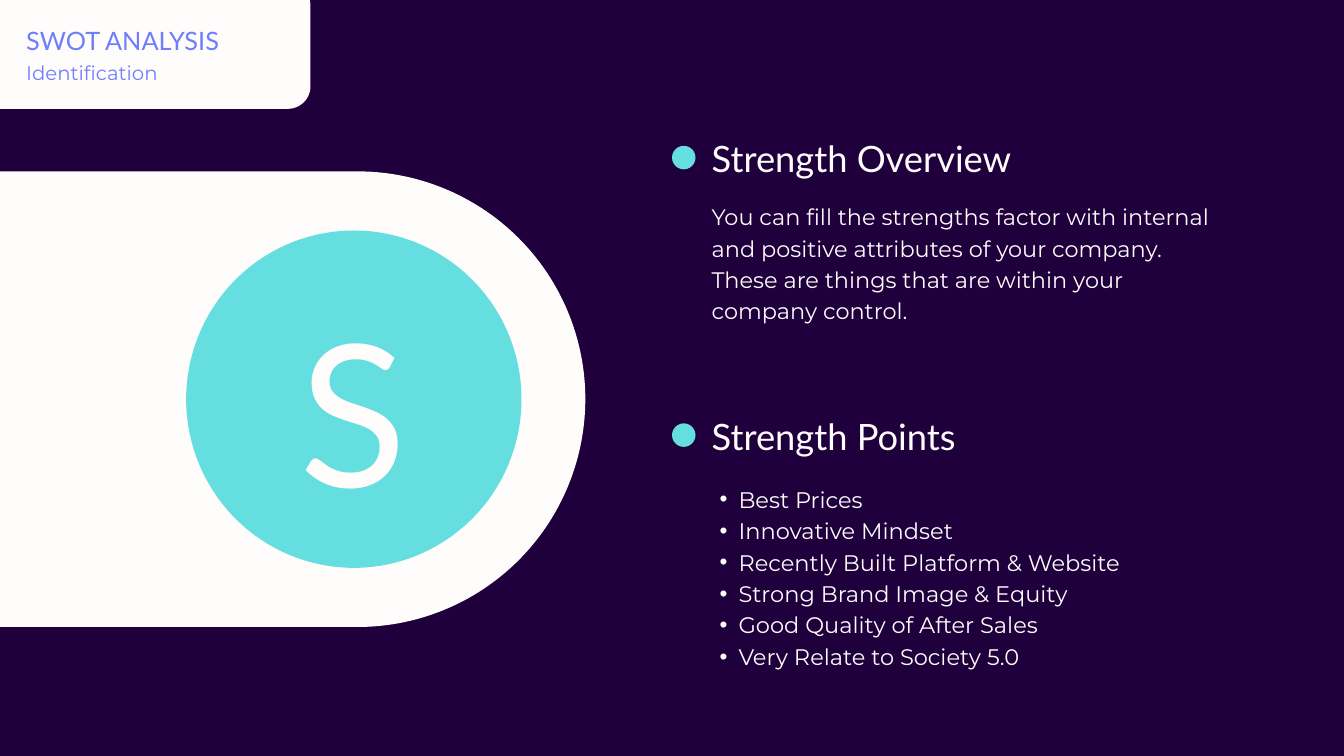
from dataclasses import dataclass

import pptx
import pptx.dml.color
import pptx.enum.shapes
import pptx.enum.text
import pptx.oxml.ns
import pptx.util
from lxml import etree
from pptx.util import Inches

SHAPES = pptx.enum.shapes.MSO_SHAPE
ALIGN = pptx.enum.text.PP_ALIGN

NIGHT = "1F003D"
WHITE = "FFFCFC"
AQUA = "64DEDF"
VIOLET = "6E7EFC"


@dataclass
class Area:
    left: float
    top: float
    width: float
    height: float

    def lengths(self) -> list:
        return [Inches(n) for n in (self.left, self.top, self.width, self.height)]


@dataclass
class Style:
    font: str
    size: float
    leading: float
    color: str = WHITE
    align: ALIGN = ALIGN.LEFT
    bullet: bool = False


@dataclass
class Section:
    heading: str
    top: float
    body: Area
    style: Style
    lines: list[str]


TITLE = Style("Lato", 27.1, 37.9, VIOLET)
SUBTITLE = Style("Montserrat", 21.1, 29.5, VIOLET)
LETTER = Style("Lato", 212.5, 297.5, align=ALIGN.CENTER)
HEADING = Style("Lato", 38.9, 54.5)

SECTIONS = [
    Section("Strength Overview", 1.92, Area(10.59, 2.96, 8.9, 1.82),
            Style("Montserrat", 24, 33.6),
            ["You can fill the strengths factor with internal",
             "and positive attributes of your company.",
             "These are things that are within your",
             "company control."]),
    Section("Strength Points", 6.05, Area(10.42, 7.16, 8.62, 2.75),
            Style("Montserrat", 24.1, 33.7, bullet=True),
            ["Best Prices",
             "Innovative Mindset",
             "Recently Built Platform & Website",
             "Strong Brand Image & Equity",
             "Good Quality of After Sales",
             "Very Relate to Society 5.0"]),
]


def rgb(color: str) -> pptx.dml.color.RGBColor:
    return pptx.dml.color.RGBColor.from_string(color)


def set_values(target, values: dict) -> None:
    for name, value in values.items():
        setattr(target, name, value)


def add_bullet(para) -> None:
    properties = para._p.get_or_add_pPr()
    properties.set("marL", str(Inches(0.57)))
    properties.set("indent", str(Inches(-0.28)))
    for tag, name, value in (("a:buFont", "typeface", "Arial"), ("a:buChar", "char", "•")):
        etree.SubElement(properties, pptx.oxml.ns.qn(tag)).set(name, value)


def fill_text(box, area: Area, lines: list[str], style: Style) -> None:
    """Place a text box or placeholder and write one paragraph per line."""
    set_values(box, dict(zip(("left", "top", "width", "height"), area.lengths())))
    frame = box.text_frame
    set_values(frame, {
        "margin_left": 0, "margin_top": 0, "margin_right": 0, "margin_bottom": 0,
        "word_wrap": True,
        "vertical_anchor": pptx.enum.text.MSO_ANCHOR.TOP,
        "auto_size": pptx.enum.text.MSO_AUTO_SIZE.SHAPE_TO_FIT_TEXT,
    })
    for index, line in enumerate(lines):
        para = frame.add_paragraph() if index else frame.paragraphs[0]
        if style.bullet:
            add_bullet(para)
        set_values(para, {"alignment": style.align,
                          "line_spacing": pptx.util.Pt(style.leading)})
        span = para.add_run()
        span.text = line
        set_values(span.font, {"name": style.font, "size": pptx.util.Pt(style.size)})
        span.font.color.rgb = rgb(style.color)


def add_text(page, area: Area, lines: list[str], style: Style) -> None:
    fill_text(page.shapes.add_textbox(*area.lengths()), area, lines, style)


def add_block(page, kind: SHAPES, area: Area, color: str):
    """Add a plain filled shape without line or shadow."""
    shape = page.shapes.add_shape(kind, *area.lengths())
    shape.shadow.inherit = False
    shape.fill.solid()
    shape.fill.fore_color.rgb = rgb(color)
    shape.line.fill.background()
    return shape


def add_section(page, section: Section) -> None:
    add_block(page, SHAPES.OVAL, Area(10, section.top + 0.25, 0.35, 0.35), AQUA)
    add_text(page, Area(10.59, section.top, 7.08, 0.74), [section.heading], HEADING)
    add_text(page, section.body, section.lines, section.style)


def main() -> None:
    deck = pptx.Presentation()
    set_values(deck, {"slide_width": Inches(20), "slide_height": Inches(11.25)})
    page = deck.slides.add_slide(deck.slide_layouts[5])
    page.background.fill.solid()
    page.background.fill.fore_color.rgb = rgb(NIGHT)

    tab = add_block(page, SHAPES.ROUNDED_RECTANGLE, Area(-0.56, -0.25, 5.18, 1.87), WHITE)
    tab.adjustments[0] = 0.18
    title = page.shapes.title
    fill_text(title, Area(0.39, 0.3, 4.04, 0.5), ["SWOT ANALYSIS"], TITLE)
    tab._element.addnext(title._element)
    add_text(page, Area(0.39, 0.85, 2.84, 0.39), ["Identification"], SUBTITLE)

    banner = add_block(page, SHAPES.ROUND_2_SAME_RECTANGLE, Area(0.25, 0.87, 6.78, 10.14), WHITE)
    banner.rotation = 90
    banner.adjustments[0] = 0.5
    add_block(page, SHAPES.OVAL, Area(2.77, 3.43, 4.99, 5.02), AQUA)
    add_text(page, Area(3.54, 3.72, 3.44, 3.98), ["S"], LETTER)

    for section in SECTIONS:
        add_section(page, section)
    deck.save("out.pptx")


if __name__ == "__main__":
    main()
